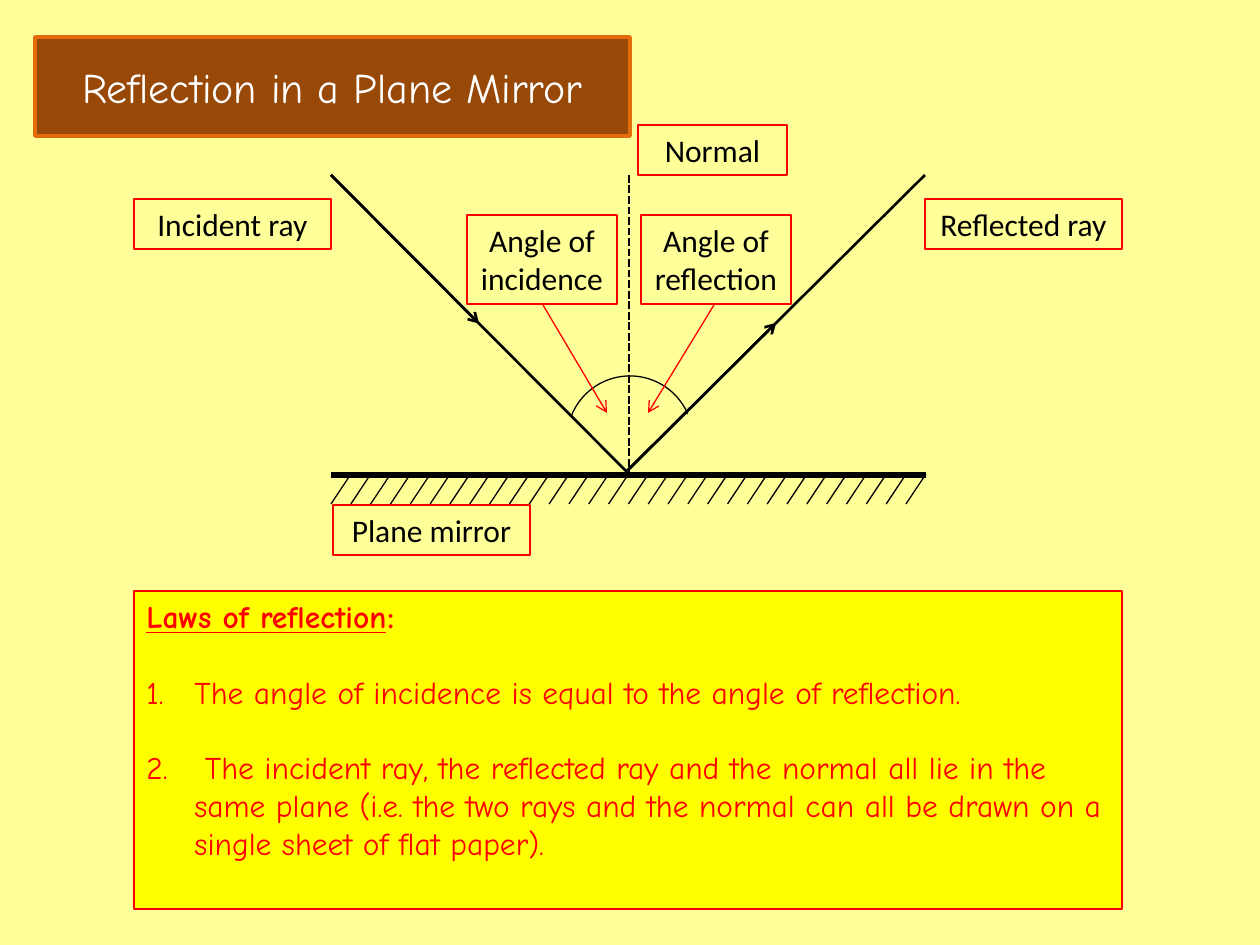
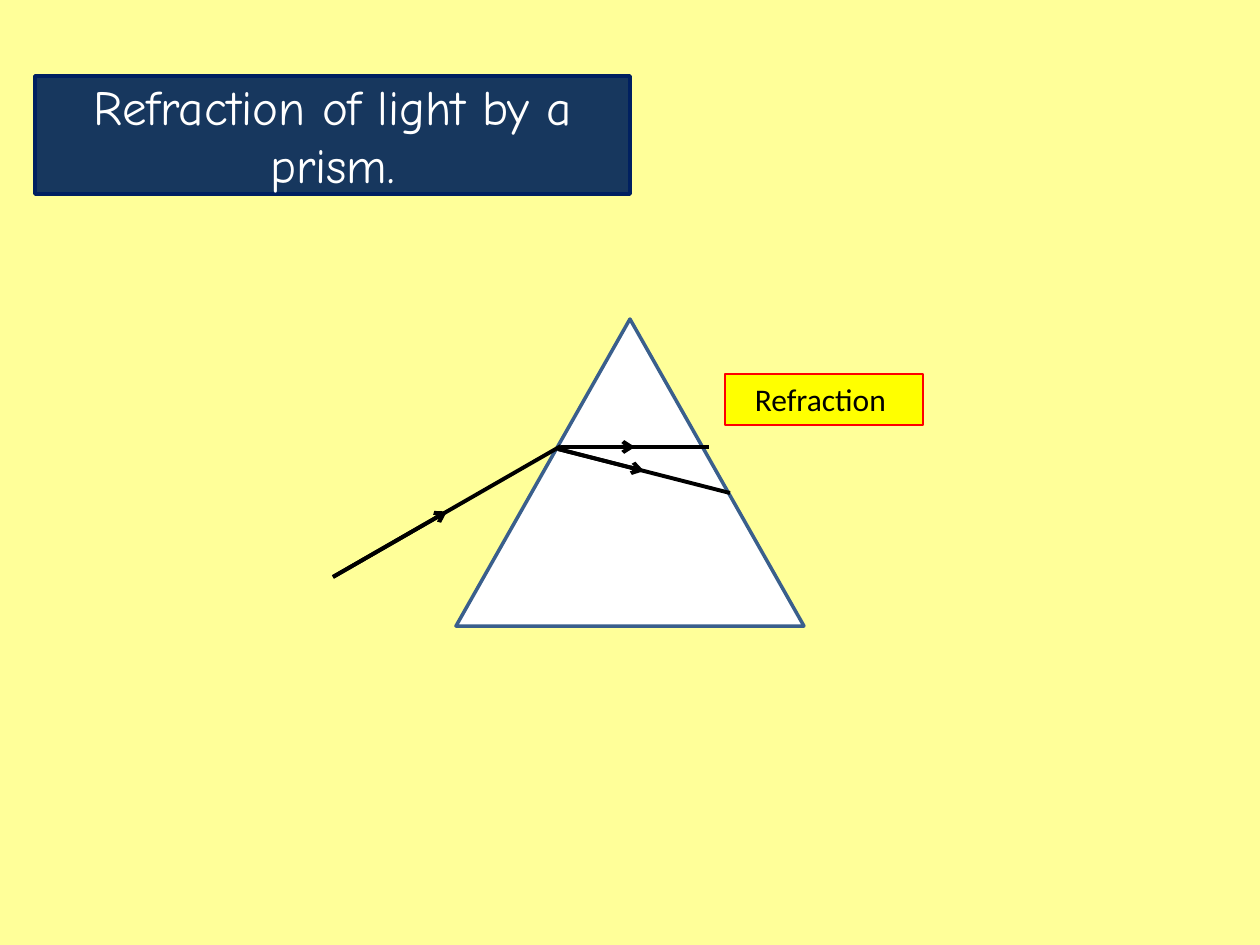
from lxml import etree
from pptx import Presentation
from pptx.dml.color import RGBColor
from pptx.enum.dml import MSO_LINE
from pptx.enum.shapes import MSO_CONNECTOR, MSO_SHAPE
from pptx.enum.text import MSO_ANCHOR, MSO_AUTO_SIZE, PP_ALIGN
from pptx.oxml.ns import qn
from pptx.util import Emu, Pt

STRAIGHT = MSO_CONNECTOR.STRAIGHT
ARC, TRIANGLE = MSO_SHAPE.ARC, MSO_SHAPE.ISOSCELES_TRIANGLE
DASHED = MSO_LINE.SQUARE_DOT
CENTER, LEFT = PP_ALIGN.CENTER, PP_ALIGN.LEFT
TOP, MIDDLE = MSO_ANCHOR.TOP, MSO_ANCHOR.MIDDLE
NO_AUTOFIT = MSO_AUTO_SIZE.NONE

# Shared look
PX = 914400 / 126
TITLE_ONLY = 5
PAPER, YELLOW, WHITE = "FFFF99", "FFFF00", "FFFFFF"
BLACK, RED = "000000", "FF0000"
LABEL_FONT = {"name": "Calibri", "size": Pt(18)}
LAW_FONT = {"name": "Comic Neue", "size": Pt(18)}
HEADING_FONT = {**LAW_FONT, "bold": True, "underline": True}


def px(length):
    return Emu(round(length * PX))


def box_of(*lengths):
    return [px(length) for length in lengths]


def color(hex_string):
    return RGBColor.from_string(hex_string)


def set_values(target, values):
    for name, value in values.items():
        setattr(target, name, value)


def paint(shape, fill, line, width):
    if fill:
        shape.fill.solid()
        shape.fill.fore_color.rgb = color(fill)
    else:
        shape.fill.background()
    shape.line.color.rgb = color(line)
    shape.line.width = Pt(width)


def write(paragraph, text, font, ink):
    run = paragraph.add_run()
    run.text = text
    set_values(run.font, font)
    run.font.color.rgb = color(ink)


# Lines and rays
def add_line(shapes, start, end, ink=BLACK, width=0.75, arrow=False):
    line = shapes.add_connector(STRAIGHT, *box_of(*start, *end))
    line.line.color.rgb = color(ink)
    line.line.width = Pt(width)
    if arrow:
        outline = line.line._get_or_add_ln()
        etree.SubElement(outline, qn("a:tailEnd"), type="arrow")
    etree.SubElement(line._element.spPr, qn("a:effectLst"))
    return line


def add_ray(slide, start, end, width):
    """Draw a full ray and an arrow to its middle."""
    shapes = slide.shapes.add_group_shape().shapes
    middle = [(a + b) / 2 for a, b in zip(start, end)]
    add_line(shapes, start, end, width=width)
    add_line(shapes, start, middle, width=width, arrow=True)


# Title and labels
def add_slide(presentation, text, box, fill, line, size, geometry):
    slide = presentation.slides.add_slide(
        presentation.slide_layouts[TITLE_ONLY])
    title = slide.shapes.title
    set_values(title, dict(zip(("left", "top", "width", "height"),
                               box_of(*box))))
    preset = etree.SubElement(title._element.spPr, qn("a:prstGeom"),
                              prst=geometry)
    etree.SubElement(preset, qn("a:avLst"))
    paint(title, fill, line, 2)
    set_values(title.text_frame, {"word_wrap": True, "auto_size": NO_AUTOFIT,
                                  "vertical_anchor": MIDDLE})
    paragraph = title.text_frame.paragraphs[0]
    paragraph.alignment = CENTER
    write(paragraph, text, {"name": "Comic Neue", "size": Pt(size)}, WHITE)
    return slide


def add_text_panel(slide, box, fill=None):
    panel = slide.shapes.add_textbox(*box_of(*box))
    paint(panel, fill, RED, 0.75)
    set_values(panel.text_frame, {"word_wrap": True, "auto_size": NO_AUTOFIT,
                                  "vertical_anchor": TOP})
    return panel.text_frame


def add_label(slide, text, box, fill=None):
    paragraph = add_text_panel(slide, box, fill).paragraphs[0]
    paragraph.alignment = CENTER
    write(paragraph, text, LABEL_FONT, BLACK)


# Regions of the reflection slide
def add_mirror(slide, left, top, width):
    hatch_count, slant, depth = 30, 20, 30
    shapes = slide.shapes.add_group_shape().shapes
    step = (width - slant) / (hatch_count - 1)
    for index in range(hatch_count):
        foot = left + index * step
        add_line(shapes, (foot + slant, top - 1), (foot, top + depth - 1))
    add_line(shapes, (left, top), (left + width, top), width=3)
    add_label(slide, "Plane mirror", (left + 2, top + depth, 197, 50))


def add_reflected_light(slide, left, top, width, height):
    center, right, bottom = left + 296, left + width, top + height
    normal = add_line(slide.shapes, (center + 2, top), (center + 2, bottom),
                      width=1.5)
    normal.line.dash_style = DASHED
    add_label(slide, "Normal", (center + 11, top - 50, 149, 50))
    add_ray(slide, (left, top), (center, bottom), 1.5)
    add_label(slide, "Incident ray", (left - 197, top + 24, 197, 50))
    add_ray(slide, (center, bottom - 1), (right, top), 1.5)
    add_label(slide, "Reflected ray", (right, top + 24, 197, 50))

    # Angles between the rays and the normal
    arc = slide.shapes.add_shape(
        ARC, *box_of(center - 60, bottom - 96, 126, 126))
    arc.shadow.inherit = False
    paint(arc, None, BLACK, 0.75)
    for index, degrees in enumerate((200.86, 336.65)):
        arc.adjustments[index] = degrees * 0.6
    angles = (("Angle of incidence", -160, -84, -20),
              ("Angle of reflection", 14, 87, 21))
    for text, label_left, tail, head in angles:
        add_label(slide, text, (center + label_left, top + 40, 150, 89))
        add_line(slide.shapes, (center + tail, top + 130),
                 (center + head, top + 238), RED, arrow=True)


def add_laws(slide, box):
    frame = add_text_panel(slide, box, YELLOW)
    heading = frame.paragraphs[0]
    heading.alignment = LEFT
    write(heading, "Laws of reflection", HEADING_FONT, RED)
    write(heading, ":", LABEL_FONT, RED)
    laws = (
        "The angle of incidence is equal to the angle of reflection.",
        " The incident ray, the reflected ray and the normal all lie in the "
        "same plane (i.e. the two rays and the normal can all be drawn on a "
        "single sheet of flat paper).",
    )
    for number, law in enumerate(laws, 1):
        paragraph = frame.add_paragraph()
        paragraph.space_before = Pt(21.5)
        properties = paragraph._p.get_or_add_pPr()
        properties.set("marL", str(px(48)))
        properties.set("indent", str(px(-48)))
        etree.SubElement(properties, qn("a:buFont"), typeface="+mj-lt")
        etree.SubElement(properties, qn("a:buAutoNum"),
                         type="arabicPeriod", startAt=str(number))
        write(paragraph, law, LAW_FONT, RED)


# Region of the refraction slide
def add_prism(slide, left, top, width, height):
    prism = slide.shapes.add_shape(
        TRIANGLE, *box_of(left, top, width, height))
    prism.shadow.inherit = False
    paint(prism, WHITE, "3A5F8C", 2)
    add_label(slide, "Refraction ", (left + 269, top + 55, 198, 51), YELLOW)
    rays = (((-123, 258), (105, 127)),
            ((105, 128), (253, 128)),
            ((102, 130), (274, 174)))
    for ends in rays:
        start, end = [(left + x, top + y) for x, y in ends]
        add_ray(slide, start, end, 2.25)


def build_reflection(presentation):
    slide = add_slide(presentation, "Reflection in a Plane Mirror",
                      (35, 37, 595, 99), "984807", "E46C0A", 24, "roundRect")
    add_mirror(slide, 331, 475, 595)
    add_reflected_light(slide, 331, 175, 594, 297)
    add_laws(slide, (134, 591, 988, 318))


def build_refraction(presentation):
    slide = add_slide(presentation, "Refraction of light by a prism.",
                      (35, 76, 595, 118), "17375E", "002060", 28, "rect")
    add_prism(slide, 456, 319, 348, 307)


def main():
    presentation = Presentation()
    presentation.slide_width, presentation.slide_height = box_of(1260, 945)
    background = presentation.slide_master.background.fill
    background.solid()
    background.fore_color.rgb = color(PAPER)
    build_reflection(presentation)
    build_refraction(presentation)
    presentation.save("out.pptx")


if __name__ == "__main__":
    main()
